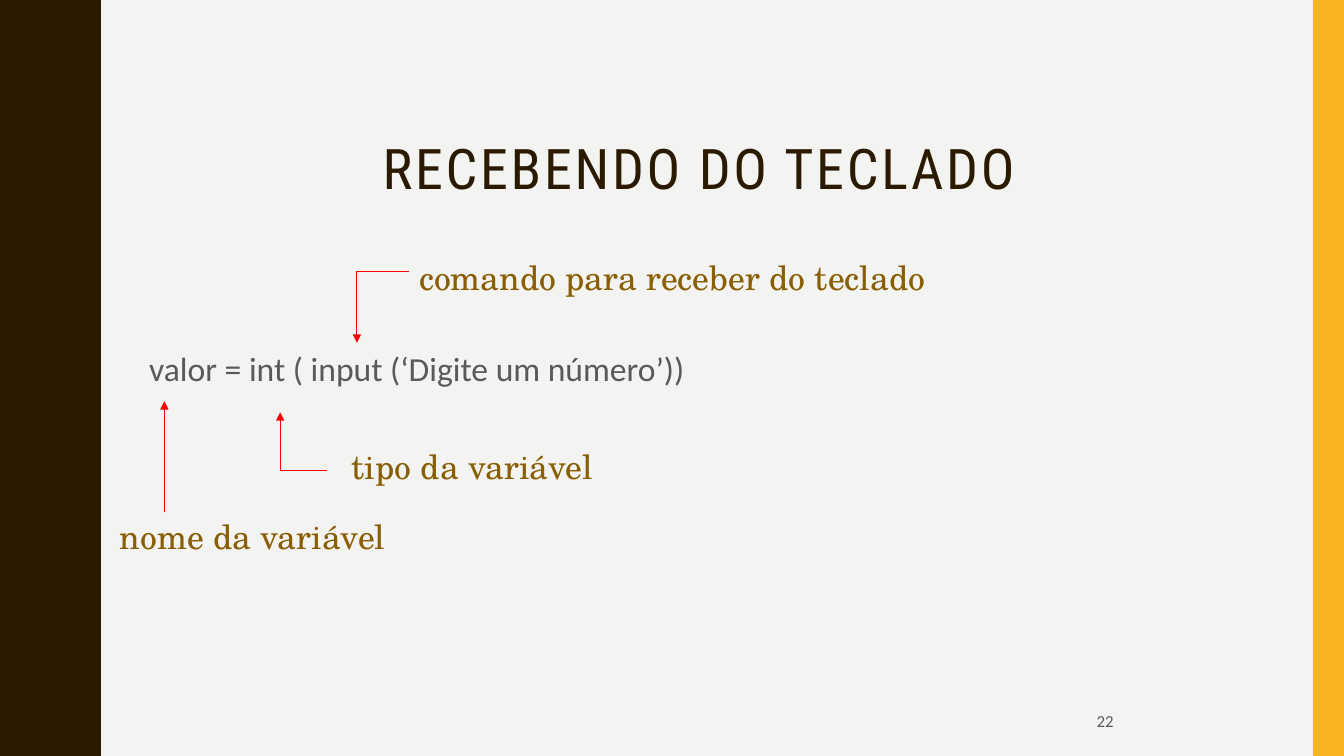
import dataclasses

import pptx
import pptx.dml.color
import pptx.enum.shapes
import pptx.enum.text
import pptx.oxml
import pptx.oxml.ns
import pptx.util
from lxml import etree

Inches = pptx.util.Inches
Pt = pptx.util.Pt
Align = pptx.enum.text.PP_ALIGN
Anchor = pptx.enum.text.MSO_ANCHOR
Link = pptx.enum.shapes.MSO_CONNECTOR
qn = pptx.oxml.ns.qn

PAPER, BROWN, AMBER = "F3F3F2", "2A1A00", "F8B323"
GREY, OCHRE, RED = "595959", "895E04", "FF0000"
WIDTH, HEIGHT = 13.33, 7.5


@dataclasses.dataclass
class Label:
    text: str
    left: float
    top: float
    width: float


@dataclasses.dataclass
class Arrow:
    start: tuple[float, float]
    end: tuple[float, float]


LABELS = [
    Label("nome da variável", 1.09, 5.07, 3.39),
    Label("tipo da variável", 3.39, 4.37, 3.38),
    Label("comando para receber do teclado", 4.06, 2.5, 5.8),
]
ARROWS = [
    Arrow((1.63, 5.08), (1.63, 3.98)),
    Arrow((3.24, 4.67), (2.78, 4.09)),
    Arrow((4.06, 2.69), (3.54, 3.4)),
]


def paint(fill, color: str) -> None:
    fill.solid()
    fill.fore_color.rgb = pptx.dml.color.RGBColor.from_string(color)


def place(shape, left: float, top: float, width: float, height: float) -> None:
    shape.left, shape.top = Inches(left), Inches(top)
    shape.width, shape.height = Inches(width), Inches(height)


def write(shape, text: str, *, font: str, color: str, size: float = 24,
          align=Align.LEFT, anchor=Anchor.TOP, lines: float = 1.0,
          inset: float = 0.1, track: float = 0) -> None:
    frame = shape.text_frame
    frame.word_wrap = True
    frame.auto_size = pptx.enum.text.MSO_AUTO_SIZE.NONE
    frame.vertical_anchor = anchor
    frame.margin_left = frame.margin_right = Inches(inset)
    frame.margin_top = frame.margin_bottom = Inches(0.05)
    para = frame.paragraphs[0]
    para.alignment, para.line_spacing = align, lines
    para.space_before = Pt(0)
    # No bullet or hanging indent
    props = para._p.get_or_add_pPr()
    props.set("marL", "0")
    props.set("indent", "0")
    etree.SubElement(props, qn("a:buNone"))
    run = para.add_run()
    run.text = text
    run.font.name, run.font.size = font, Pt(size)
    paint(run.font.fill, color)
    if track:
        run.font._element.set("spc", str(int(track * 100)))


def finish(shape, color: str) -> None:
    paint(shape.fill, color)
    shape.line.fill.background()
    shape.shadow.inherit = False


def draw_wave(slide) -> None:
    # Each quarter turn is mirrored into a half, then into a full wave
    step = [(0.78, 0), (0.78, 0.07), (0.79, 0.14), (0.8, 0.2), (0.81, 0.25),
            (0.83, 0.29), (0.85, 0.33)]
    half = step + [(1.75 - x, 0.75 - y) for x, y in reversed(step)]
    wave = half + [(x, 1.5 - y) for x, y in reversed(half)]
    edge = [(x, y + 1.5 * turn) for turn in range(5) for x, y in wave]
    form = slide.shapes.build_freeform(0, 0, scale=Inches(1))
    form.add_line_segments(edge + [(0, HEIGHT)], close=True)
    finish(form.convert_to_shape(), BROWN)


def draw_arrow(slide, arrow: Arrow) -> None:
    (x1, y1), (x2, y2) = arrow.start, arrow.end
    bent = x1 != x2
    if bent:
        # An elbow turned by 90 degrees leaves sideways, then runs up or down
        mid_x, mid_y = (x1 + x2) / 2, (y1 + y2) / 2
        run, rise = (y2 - y1) / 2, abs(x2 - x1) / 2
        x1, x2 = mid_x - run, mid_x + run
        y1, y2 = mid_y - rise, mid_y + rise
    kind = Link.ELBOW if bent else Link.STRAIGHT
    line = slide.shapes.add_connector(
        kind, Inches(x1), Inches(y1), Inches(x2), Inches(y2))
    paint(line.line.fill, RED)
    line.line.width = Pt(0.75)
    props = line._element.spPr
    if bent:
        props.find(qn("a:xfrm")).set("rot", "5400000")
        guides = props.find(qn("a:prstGeom")).get_or_add_avLst()
        etree.SubElement(guides, qn("a:gd"), name="adj1", fmla="val 0")
    etree.SubElement(line.line._get_or_add_ln(), qn("a:tailEnd"),
                     type="triangle")
    etree.SubElement(props, qn("a:effectLst"))


def main() -> None:
    deck = pptx.Presentation()
    deck.slide_width, deck.slide_height = Inches(WIDTH), Inches(HEIGHT)
    slide = deck.slides.add_slide(deck.slide_layouts[1])

    # Background and side bands
    paint(slide.background.fill, PAPER)
    draw_wave(slide)
    band = slide.shapes.add_shape(
        pptx.enum.shapes.MSO_SHAPE.RECTANGLE,
        Inches(13.02), 0, Inches(0.31), Inches(HEIGHT))
    finish(band, AMBER)

    # Title and code line
    title, body = slide.shapes.title, slide.placeholders[1]
    place(title, 1.37, 0.42, 11.13, 1.63)
    write(title, "RECEBENDO DO TECLADO", font="Roboto Condensed", color=BROWN,
          size=40, align=Align.CENTER, anchor=Anchor.BOTTOM, lines=0.9,
          track=2)
    place(body, 1.38, 3.43, 9.4, 4.76)
    write(body, "valor = int ( input (‘Digite um número’))", font="Calibri",
          color=GREY, lines=0.95)

    # Page number
    page = slide.shapes.add_textbox(
        Inches(9.42), Inches(6.97), Inches(3.08), Inches(0.38))
    write(page, "22", font="Calibri", color=GREY, size=12, align=Align.CENTER,
          anchor=Anchor.MIDDLE, lines=0.9, inset=0.05)

    # Arrows and their labels
    for arrow in ARROWS:
        draw_arrow(slide, arrow)
    for label in LABELS:
        box = slide.shapes.add_textbox(
            Inches(label.left), Inches(label.top), Inches(label.width),
            Inches(0.4))
        write(box, label.text, font="TeX Gyre Schola", color=OCHRE)

    deck.save("out.pptx")


if __name__ == "__main__":
    main()
